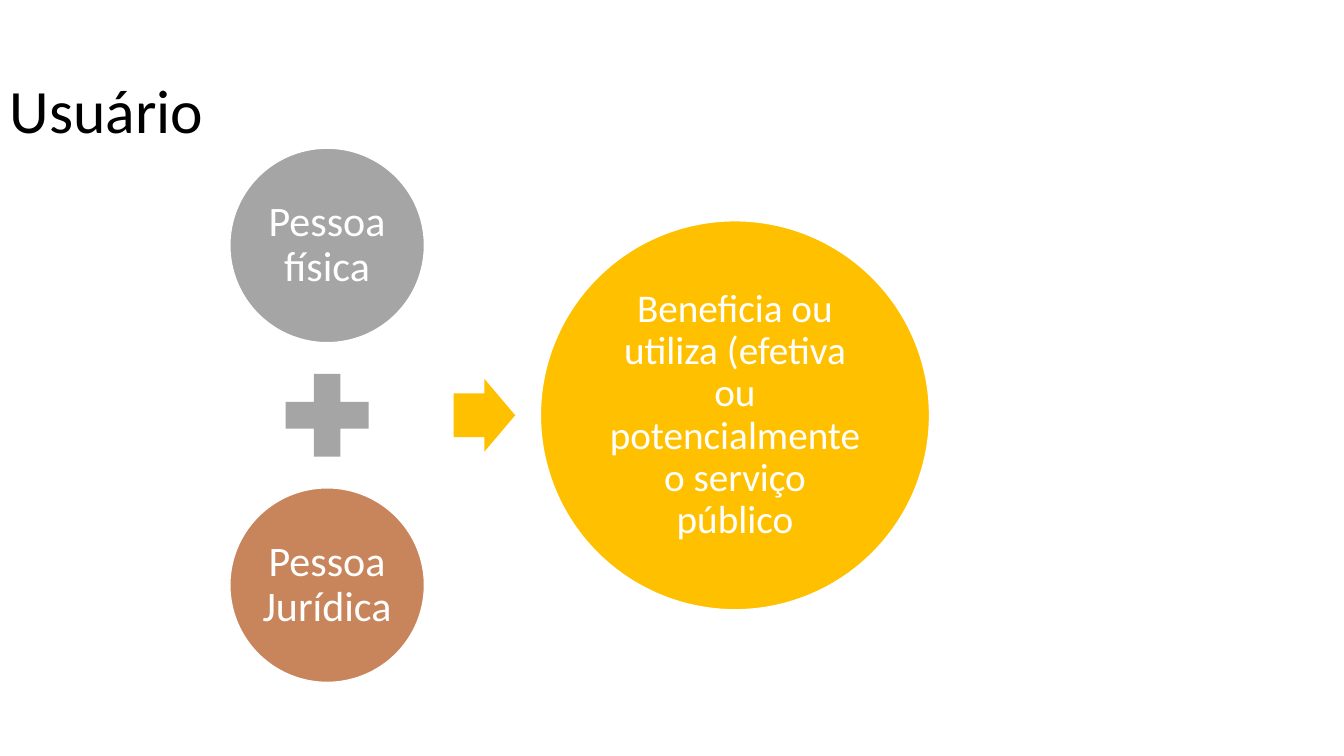
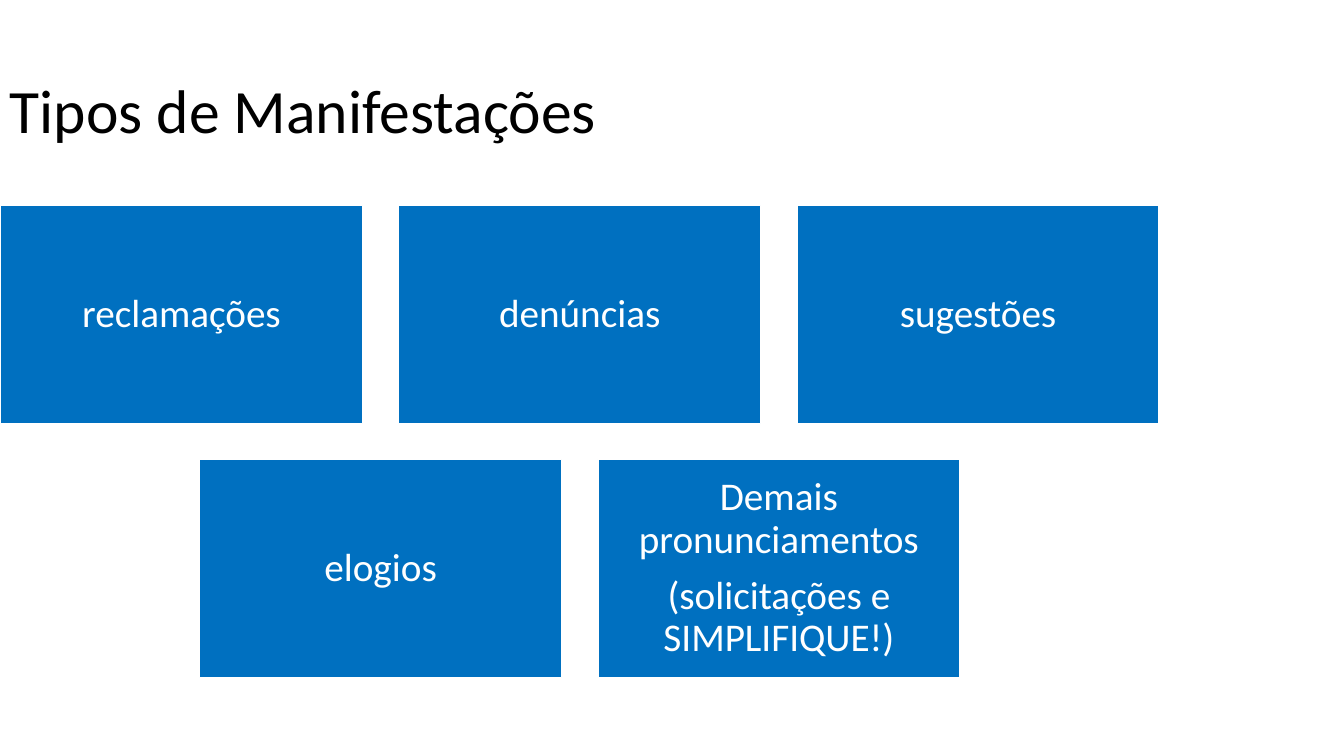
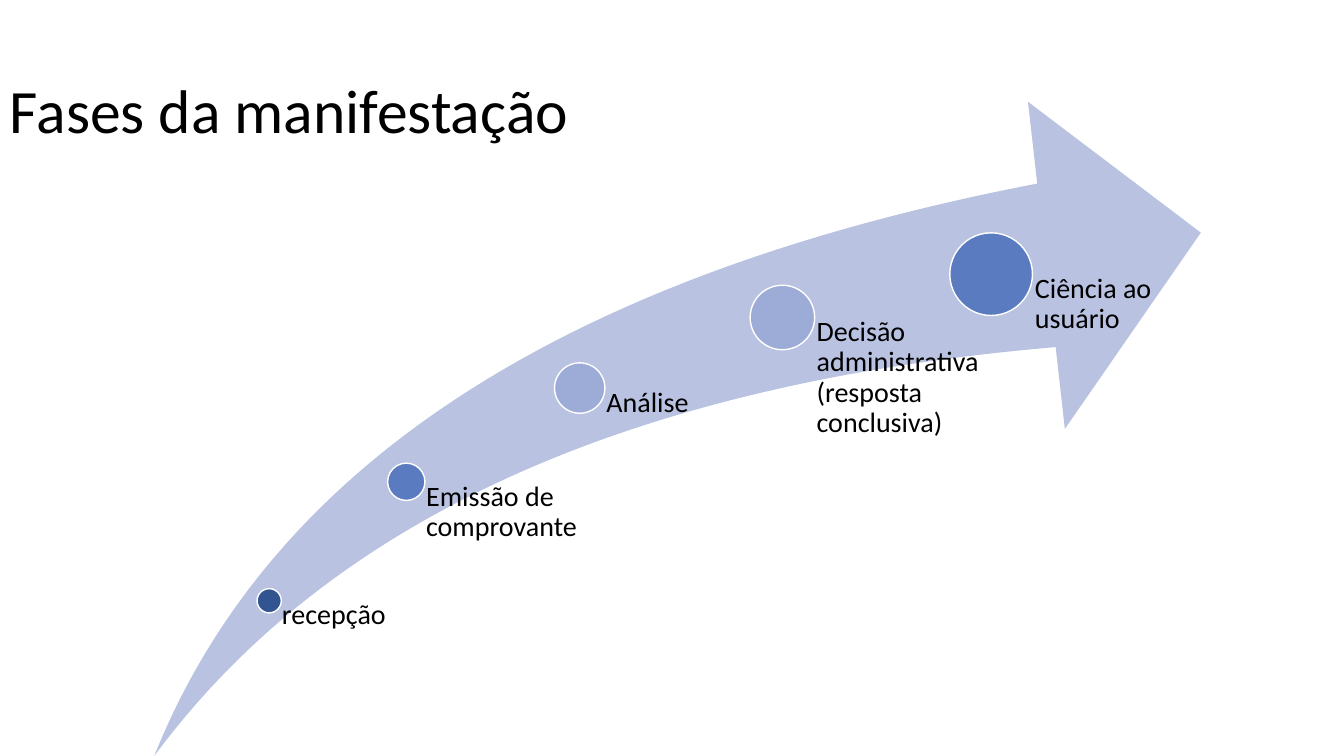
from dataclasses import dataclass

from pptx import Presentation
from pptx.dml.color import RGBColor
from pptx.enum.shapes import MSO_SHAPE
from pptx.enum.text import MSO_ANCHOR, PP_ALIGN
from pptx.util import Emu, Pt

OVAL = MSO_SHAPE.OVAL
RECTANGLE = MSO_SHAPE.RECTANGLE
PLUS = MSO_SHAPE.MATH_PLUS
RIGHT_ARROW = MSO_SHAPE.RIGHT_ARROW
SWOOSH_ARROW = MSO_SHAPE.SWOOSH_ARROW
LEFT, CENTER = PP_ALIGN.LEFT, PP_ALIGN.CENTER
TOP, MIDDLE = MSO_ANCHOR.TOP, MSO_ANCHOR.MIDDLE

EMU_PER_PX = 9144  # 100 px to the inch
SLIDE_WIDTH, SLIDE_HEIGHT = 1333, 750
CONTENT_WIDTH = 1150


@dataclass(frozen=True)
class Theme:
    font: str = "Calibri"
    black: str = "000000"
    white: str = "FFFFFF"
    gray: str = "A5A5A5"
    copper: str = "C8855C"
    gold: str = "FFC000"
    blue: str = "0070C0"
    swoosh: str = "B9C2E1"
    dot_dark: str = "325491"
    dot_medium: str = "5B7BC0"
    dot_light: str = "9DACD6"
    title_size: int = 44
    circle_size: int = 30
    body_size: int = 28
    label_size: int = 20
    line_spacing: float = 0.9
    paragraph_gap: float = 0.35
    outline: int = 1


def px(length):
    return Emu(round(length * EMU_PER_PX))


class Deck:
    def __init__(self, theme):
        self.theme = theme
        self.presentation = Presentation()
        self.presentation.slide_width = px(SLIDE_WIDTH)
        self.presentation.slide_height = px(SLIDE_HEIGHT)
        self.slide = None

    def new_slide(self, title):
        layout = self.presentation.slide_layouts[6]
        self.slide = self.presentation.slides.add_slide(layout)
        self.text_box((0, 40, CONTENT_WIDTH, 145), title, self.theme.title_size,
                      (10, 5, 10, 5), MIDDLE)

    def set_text(self, shape, text, size, color, insets, align, anchor):
        frame = shape.text_frame
        frame.word_wrap = True
        frame.vertical_anchor = anchor
        (frame.margin_left, frame.margin_top,
         frame.margin_right, frame.margin_bottom) = map(px, insets)
        frame.text = text
        for paragraph in frame.paragraphs:
            paragraph.alignment = align
            paragraph.line_spacing = self.theme.line_spacing
            for run in paragraph.runs:
                run.font.name = self.theme.font
                run.font.size = Pt(size)
                run.font.color.rgb = RGBColor.from_string(color)
        for paragraph in frame.paragraphs[1:]:
            paragraph.space_before = Pt(size * self.theme.paragraph_gap)

    def text_box(self, box, text, size, insets, anchor=TOP):
        shape = self.slide.shapes.add_textbox(*map(px, box))
        self.set_text(shape, text, size, self.theme.black, insets, LEFT, anchor)

    def shape(self, kind, box, fill, outlined=False, adjustments=()):
        shape = self.slide.shapes.add_shape(kind, *map(px, box))
        shape.shadow.inherit = False
        shape.fill.solid()
        shape.fill.fore_color.rgb = RGBColor.from_string(fill)
        if outlined:
            shape.line.color.rgb = RGBColor.from_string(self.theme.white)
            shape.line.width = Pt(self.theme.outline)
        else:
            shape.line.fill.background()
        for index, value in enumerate(adjustments):
            shape.adjustments[index] = value
        return shape

    def panel(self, kind, box, fill, text, size, inset):
        shape = self.shape(kind, box, fill, outlined=True)
        self.set_text(shape, text, size, self.theme.white, (inset,) * 4, CENTER, MIDDLE)


def user_slide(deck):
    theme = deck.theme
    deck.new_slide("Usuário")

    # Two kinds of person, joined by a plus sign
    left, top, diameter, plus, gap = 228, 147, 193, 112, 16
    plus_top = top + diameter + gap
    lower_top = plus_top + plus + gap
    middle = plus_top + plus / 2
    for circle_top, fill, text in ((top, theme.gray, "Pessoa física"),
                                   (lower_top, theme.copper, "Pessoa Jurídica")):
        deck.panel(OVAL, (left, circle_top, diameter, diameter), fill, text,
                   theme.circle_size, 3)
    deck.shape(PLUS, (left + (diameter - plus) / 2, plus_top, plus, plus), theme.gray)

    # Result
    deck.shape(RIGHT_ARROW, (450, middle - 36, 61, 72), theme.gold,
               adjustments=(0.6, 0.5))
    deck.panel(OVAL, (536, middle - 193, 386, 386), theme.gold,
               "Beneficia ou utiliza (efetiva ou potencialmente o serviço público",
               theme.body_size, 4)


def types_slide(deck):
    deck.new_slide("Tipos de Manifestações")

    # Rows of cards, each centred in the content width
    rows = (("reclamações", "denúncias", "sugestões"),
            ("elogios", "Demais pronunciamentos\n(solicitações e SIMPLIFIQUE!)"))
    top, width, height, gap = 204, 359, 216, 36
    for row, texts in enumerate(rows):
        row_width = len(texts) * (width + gap) - gap
        left = (CONTENT_WIDTH - row_width) / 2
        for column, text in enumerate(texts):
            box = (left + column * (width + gap), top + row * (height + gap),
                   width, height)
            deck.panel(RECTANGLE, box, deck.theme.blue, text, deck.theme.body_size, 12)


def phases_slide(deck):
    theme = deck.theme
    deck.new_slide("Fases da manifestação")
    deck.shape(SWOOSH_ARROW, (153, 101, 1038, 649), theme.swoosh,
               adjustments=(0.25, 0.25))

    # Dot centre, diameter, colour, label width and label
    phases = (
        (267, 596, 24, theme.dot_dark, 136, "recepção"),
        (403, 478, 37, theme.dot_medium, 172, "Emissão de comprovante"),
        (575, 385, 50, theme.dot_light, 200, "Análise"),
        (776, 315, 64, theme.dot_light, 208,
         "Decisão administrativa (resposta conclusiva)"),
        (983, 272, 82, theme.dot_medium, 208, "Ciência ao usuário"),
    )
    for x, y, diameter, fill, width, label in phases:
        radius = diameter / 2
        deck.shape(OVAL, (x - radius, y - radius, diameter, diameter), fill,
                   outlined=True)
        deck.text_box((x, y, width, SLIDE_HEIGHT - y), label, theme.label_size,
                      (diameter * 0.53, 0, 0, 0))


def main():
    deck = Deck(Theme())
    user_slide(deck)
    types_slide(deck)
    phases_slide(deck)
    deck.presentation.save("out.pptx")


if __name__ == "__main__":
    main()
